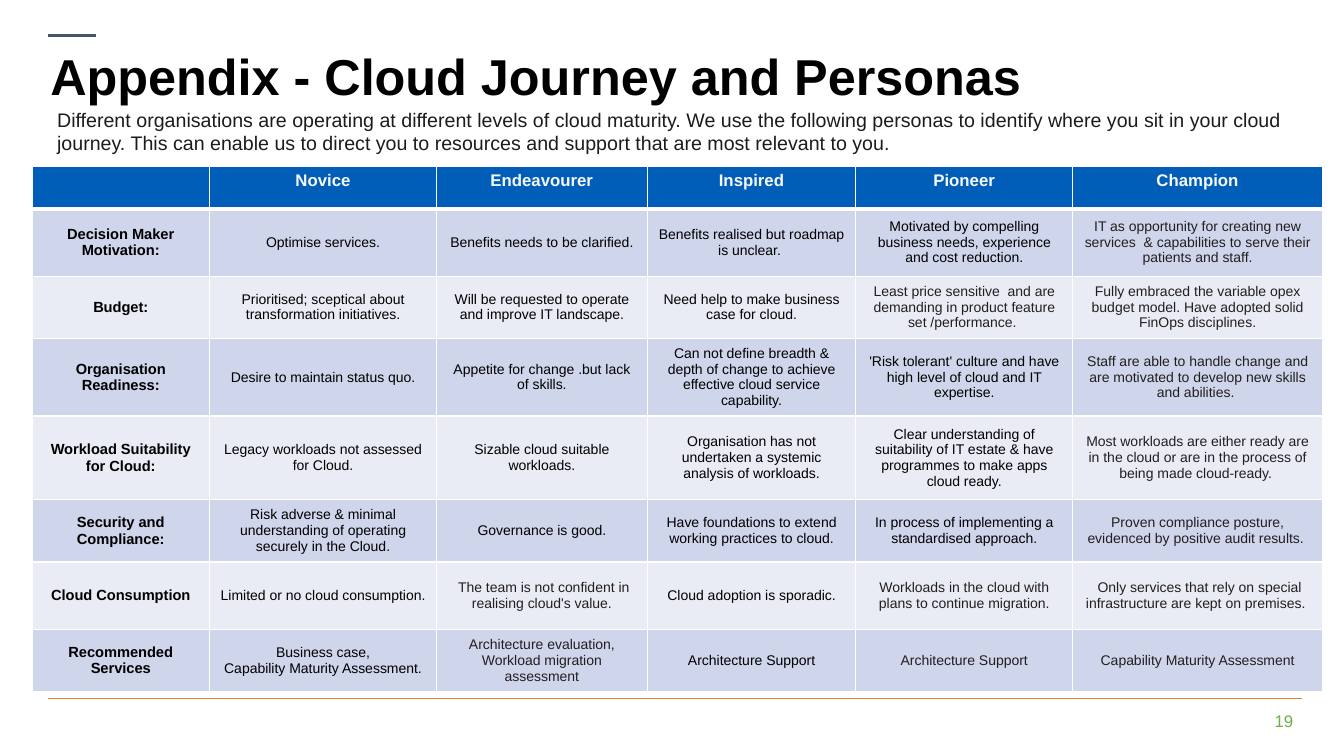
from lxml.etree import SubElement
from pptx import Presentation
from pptx.dml.color import RGBColor
from pptx.enum.shapes import MSO_CONNECTOR as Connector
from pptx.enum.text import MSO_ANCHOR as Anchor, PP_ALIGN as Align
from pptx.oxml.ns import qn
from pptx.util import Cm, Pt

COLOURS = {
    "black": "000000", "white": "FFFFFF", "ink": "1D1C1D", "grey": "231F20",
    "header": "005EB8", "header_text": "F6F8F8", "odd": "CFD5EA", "even": "E9EBF5",
    "accent": "44546A", "rule": "ED7D31", "number": "70AD47",
}
TITLE = "Appendix - Cloud Journey and Personas"
INTRO = (
    "Different organisations are operating at different levels of cloud maturity. "
    "We use the following personas to identify where you sit in your cloud journey. "
    "This can enable us to direct you to resources and support that are most relevant to you."
)
PAGE_NUMBER = "19"
ROWS = [
    ["", "Novice", "Endeavourer", "Inspired", "Pioneer", "Champion"],
    ["Decision Maker Motivation:", "Optimise services.", "Benefits needs to be clarified.",
     "Benefits realised but roadmap is unclear. ",
     "Motivated by compelling business needs, experience and cost reduction.",
     "IT as opportunity for creating new services  & capabilities to serve their patients and staff."],
    ["Budget:", "Prioritised; sceptical about transformation initiatives.",
     "Will be requested to operate and improve IT landscape.",
     "Need help to make business case for cloud.",
     "Least price sensitive  and are demanding in product feature set /performance. ",
     "Fully embraced the variable opex budget model. Have adopted solid FinOps disciplines."],
    ["Organisation Readiness:", "Desire to maintain status quo.",
     "Appetite for change .but lack of skills.",
     "Can not define breadth & depth of change to achieve effective cloud service capability.",
     "'Risk tolerant' culture and have high level of cloud and IT expertise.",
     "Staff are able to handle change and are motivated to develop new skills and abilities. "],
    ["Workload Suitability for Cloud:", "Legacy workloads not assessed for Cloud.",
     "Sizable cloud suitable workloads.",
     "Organisation has not undertaken a systemic analysis of workloads.",
     "Clear understanding of suitability of IT estate & have programmes to make apps cloud ready.",
     "Most workloads are either ready are in the cloud or are in the process of being made cloud-ready. "],
    ["Security and Compliance:",
     "Risk adverse & minimal understanding of operating securely in the Cloud.",
     "Governance is good.", "Have foundations to extend working practices to cloud.",
     "In process of implementing a standardised approach.",
     "Proven compliance posture, evidenced by positive audit results. "],
    ["Cloud Consumption", "Limited or no cloud consumption.",
     " The team is not confident in realising cloud's value.",
     "Cloud adoption is sporadic.",
     "Workloads in the cloud with plans to continue migration.",
     " Only services that rely on special infrastructure are kept on premises. "],
    ["Recommended Services", "Business case,\nCapability Maturity Assessment.",
     "Architecture evaluation,\nWorkload migration assessment",
     "Architecture Support", "Architecture Support", "Capability Maturity Assessment"],
]
COLUMN_WIDTHS = [4.47, 5.72, 5.31, 5.26, 5.46, 6.3]
ROW_HEIGHTS = [1.07, 1.7, 1.57, 1.93, 2.11, 1.57, 1.7, 1.57]
GREY_CELLS = {(2, 4), (6, 2), (6, 4), (7, 2), (7, 4)}
LINES = [(0.89, 2.41, 0.89, "accent", 2), (1.2, 32.8, 17.6, "rule", 0.75)]


def colour(name):
    return RGBColor.from_string(COLOURS[name])


def write(text_frame, text, size, colour_name, bold=False, align=Align.LEFT):
    text_frame.text = text
    for paragraph in text_frame.paragraphs:
        paragraph.alignment = align
        for run in paragraph.runs:
            run.font.name = "Arial"
            run.font.size = Pt(size)
            run.font.bold = bold
            run.font.color.rgb = colour(colour_name)


def add_text(slide, box, text, size, colour_name, anchor, **style):
    text_frame = slide.shapes.add_textbox(*map(Cm, box)).text_frame
    text_frame.word_wrap = True
    text_frame.vertical_anchor = anchor
    write(text_frame, text, size, colour_name, **style)
    return text_frame


def add_rule(slide, left, right, top, colour_name, width):
    line = slide.shapes.add_connector(Connector.STRAIGHT, Cm(left), Cm(top), Cm(right), Cm(top))
    line.line.color.rgb = colour(colour_name)
    line.line.width = Pt(width)
    SubElement(line._element.spPr, qn("a:effectLst"))


def set_borders(cell, row):
    properties = cell._tc.get_or_add_tcPr()
    widths = {"L": 1, "R": 1, "T": 3 if row == 1 else 1, "B": 3 if row == 0 else 1}
    for side, width in widths.items():
        border = SubElement(properties, qn(f"a:ln{side}"), w=str(Pt(width)))
        fill = SubElement(border, qn("a:solidFill"))
        SubElement(fill, qn("a:srgbClr"), val=COLOURS["white"])


def fill_cell(cell, row, column, text):
    set_borders(cell, row)
    cell.fill.solid()
    if row == 0:
        cell.fill.fore_color.rgb = colour("header")
        write(cell.text_frame, text, 12, "header_text", True, Align.CENTER)
        return
    cell.fill.fore_color.rgb = colour("odd" if row % 2 else "even")
    cell.vertical_anchor = Anchor.MIDDLE
    is_label = column == 0
    is_grey = column == 5 or (row, column) in GREY_CELLS
    write(cell.text_frame, text, 10.5 if is_label else 10,
          "grey" if is_grey else "black", is_label, Align.CENTER)


def add_persona_table(slide):
    frame = slide.shapes.add_table(
        len(ROWS), len(COLUMN_WIDTHS), Cm(0.81), Cm(4.19),
        Cm(sum(COLUMN_WIDTHS)), Cm(sum(ROW_HEIGHTS)))
    table = frame.table
    table.horz_banding = False
    for column, width in zip(table.columns, COLUMN_WIDTHS):
        column.width = Cm(width)
    for row, height in zip(table.rows, ROW_HEIGHTS):
        row.height = Cm(height)
    for row, texts in enumerate(ROWS):
        for column, text in enumerate(texts):
            fill_cell(table.cell(row, column), row, column, text)


def main():
    presentation = Presentation()
    presentation.slide_width, presentation.slide_height = Cm(33.87), Cm(19.05)
    slide = presentation.slides.add_slide(presentation.slide_layouts[6])
    add_text(slide, (31.8, 17.78, 1.04, 0.76), PAGE_NUMBER, 12, "number", Anchor.TOP,
             align=Align.RIGHT)
    for line in LINES:
        add_rule(slide, *line[:3], *line[3:]) if line[3] == "rule" else add_rule(
            slide, 1.2, *line[1:])
    title = add_text(slide, (1.27, 1.3, 25.68, 1.4), TITLE, 36, "black", Anchor.TOP, bold=True)
    title.margin_left = title.margin_right = title.margin_top = title.margin_bottom = 0
    title.paragraphs[0].line_spacing = 0.9
    add_text(slide, (1.19, 2.62, 31.57, 1.37), INTRO, 14, "ink", Anchor.MIDDLE)
    add_persona_table(slide)
    presentation.save("out.pptx")


if __name__ == "__main__":
    main()
